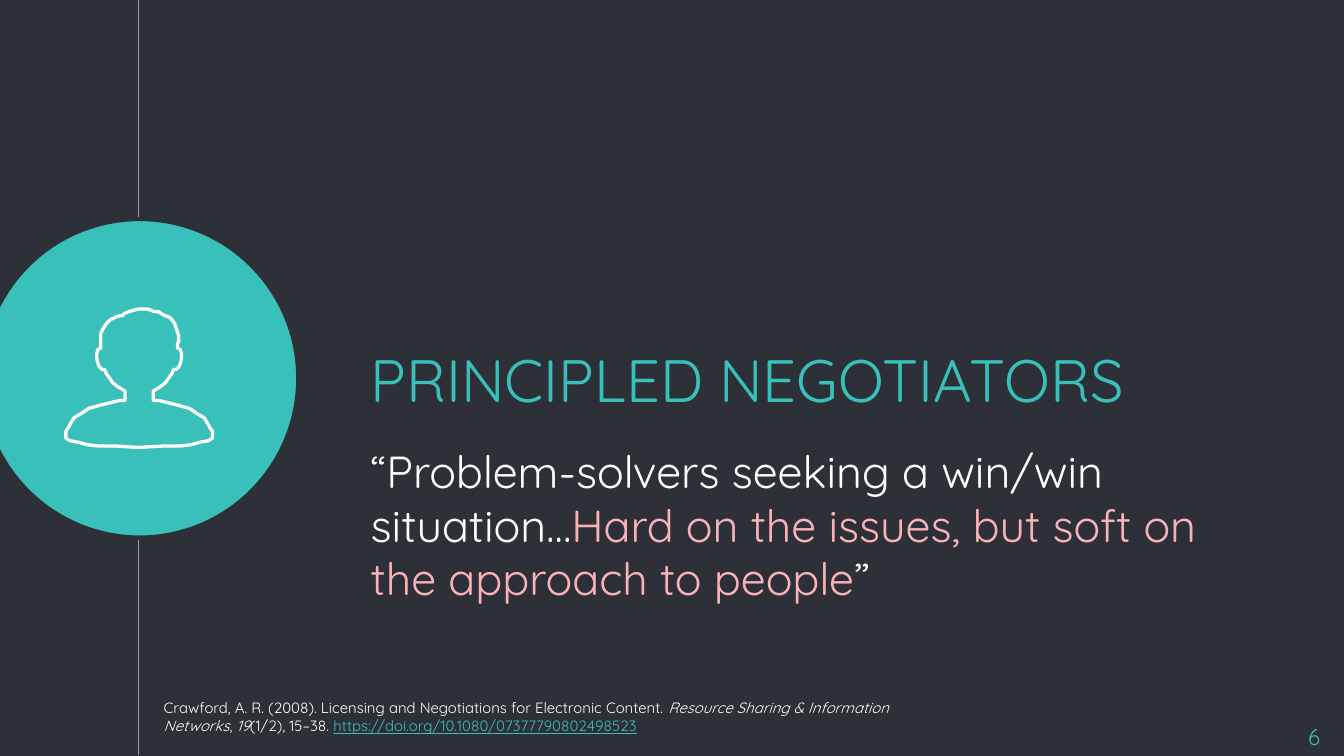
from pptx import Presentation
from pptx.dml.color import RGBColor
from pptx.enum.shapes import MSO_CONNECTOR as Conn, MSO_SHAPE as Geo
from pptx.enum.text import MSO_ANCHOR as Anchor, PP_ALIGN as Align
from pptx.oxml.ns import qn
from pptx.util import Emu, Pt

UNIT = 9144  # EMU per px, 100 px to the inch
WIDE = 1000
DARK, TEAL, GREY, WHITE, PINK = "2E3037", "39C0BA", "999FA9", "FFFFFF", "FAB2B9"

# Top of the head, from the right ear to the left ear
CROWN = [
    (132, 259), (132, 256), (133, 254), (133, 250), (132, 247), (131, 244),
    (130, 241), (128, 238), (126, 236), (123, 235), (121, 234), (118, 232),
    (115, 232), (110, 230), (103, 230), (99, 231), (96, 232), (93, 233),
    (91, 235), (89, 235), (86, 236), (82, 238), (79, 241), (77, 244),
    (75, 248), (75, 254), (75, 259),
]
# Left ear, neck and shoulder, down to the middle of the base
SIDE = [
    (73, 260), (72, 263), (72, 267), (73, 271), (74, 273), (76, 275),
    (78, 275), (79, 278), (82, 282), (84, 285), (88, 288), (93, 291),
    (93, 298), (89, 298), (81, 300), (73, 302), (66, 304), (60, 308),
    (55, 311), (52, 316), (51, 318), (49, 321), (49, 326), (52, 328),
    (58, 329), (65, 331), (74, 332), (87, 332), (103, 333),
]
MIRROR = 207  # sum of the x values of two matching points


def px(n):
    return Emu(n * UNIT)


def rgb(code):
    return RGBColor.from_string(code)


class Deck:
    def __init__(self, font):
        self.font = font
        self.file = Presentation()
        self.file.slide_width = px(WIDE)
        self.file.slide_height = px(WIDE) * 9 // 16
        self.slide = self.file.slides.add_slide(self.file.slide_layouts[6])
        self.shapes = self.slide.shapes

    def back(self, color):
        fill = self.slide.background.fill
        fill.solid()
        fill.fore_color.rgb = rgb(color)

    def edge(self, item, color, width):
        item.line.color.rgb = rgb(color)
        item.line.width = Pt(width)

    def line(self, x1, y1, x2, y2, color, width):
        item = self.shapes.add_connector(Conn.STRAIGHT, px(x1), px(y1), px(x2), px(y2))
        self.edge(item, color, width)
        props = item._element.spPr
        props.append(props.makeelement(qn("a:effectLst"), {}))

    def disc(self, x, y, w, h, fill, color, width):
        item = self.shapes.add_shape(Geo.OVAL, px(x), px(y), px(w), px(h))
        item.shadow.inherit = False
        item.fill.solid()
        item.fill.fore_color.rgb = rgb(fill)
        self.edge(item, color, width)

    def outline(self, points, color, width):
        path = self.shapes.build_freeform(*points[0], scale=UNIT)
        path.add_line_segments(points[1:], close=True)
        item = path.convert_to_shape()
        item.shadow.inherit = False
        item.fill.background()
        self.edge(item, color, width)

    def text(self, x, y, w, h, runs, size, pad=10, anchor=Anchor.TOP,
             align=Align.LEFT, before=0):
        """Add one paragraph; each run is (words, color, font marks...)."""
        frame = self.shapes.add_textbox(px(x), px(y), px(w), px(h)).text_frame
        frame.word_wrap = True
        frame.vertical_anchor = anchor
        frame.margin_left = frame.margin_right = px(10)
        frame.margin_top = frame.margin_bottom = px(pad)
        para = frame.paragraphs[0]
        para.alignment = align
        para.space_before = Pt(before)
        para.font.name, para.font.size = self.font, Pt(size)
        for words, color, *marks in runs:
            run = para.add_run()
            run.text = words
            run.font.color.rgb = rgb(color)
            for mark in marks:
                setattr(run.font, mark, True)


def main():
    deck = Deck("Quicksand")
    deck.back(DARK)
    deck.line(103, 0, 103, 562, GREY, 0.75)
    deck.disc(-14, 163, 236, 237, TEAL, DARK, 2.25)
    deck.text(266, 218, 659, 127, [("PRINCIPLED NEGOTIATORS", TEAL)], 32,
              anchor=Anchor.MIDDLE)
    deck.text(266, 320, 659, 86, [
        ("“Problem-solvers seeking a win/win situation…", WHITE),
        ("Hard on the issues, but soft on the approach to people", PINK),
        ("”", WHITE),
    ], 24, before=6)
    deck.text(932, 528, 60, 34, [("6", TEAL)], 12, align=Align.RIGHT)

    right = [(MIRROR - x, y) for x, y in reversed(SIDE[:-1])]
    deck.outline(CROWN + SIDE + right, WHITE, 1.75)

    deck.text(112, 515, 564, 61, [
        ("Crawford, A. R. (2008). Licensing and Negotiations for "
         "Electronic Content. ", WHITE),
        ("Resource Sharing & Information Networks", WHITE, "italic"),
        (", ", WHITE),
        ("19", WHITE, "italic"),
        ("(1/2), 15–38. ", WHITE),
        ("https://doi.org/10.1080/07377790802498523", TEAL, "underline"),
    ], 8, pad=5)
    deck.file.save("out.pptx")


if __name__ == "__main__":
    main()
